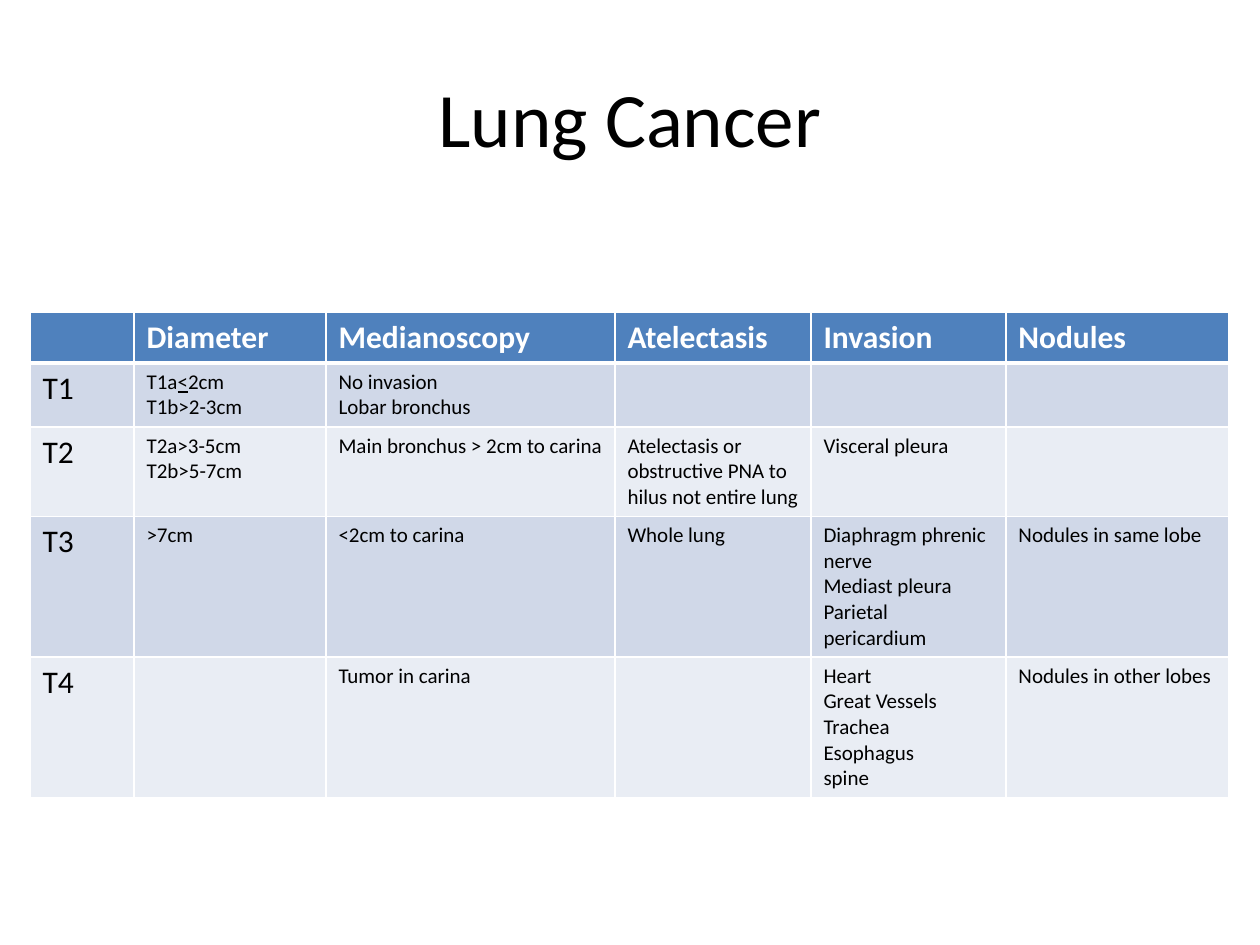
"""Build a one-page deck with the lung cancer T-stage table."""
from dataclasses import astuple, dataclass

from lxml.etree import SubElement
from pptx import Presentation
from pptx.dml.color import RGBColor
from pptx.enum.text import MSO_ANCHOR as Anchor, PP_ALIGN as Align
from pptx.oxml.ns import qn
from pptx.util import Emu, Pt

PX_PER_INCH = 126


@dataclass(frozen=True)
class Theme:
    font: str = "Calibri"
    ink: str = "000000"
    white: str = "FFFFFF"
    header: str = "4F81BD"
    bands: tuple[str, str] = ("D0D8E8", "E9EDF4")
    title_size: int = 44
    label_size: int = 18
    body_size: int = 12
    thin: int = 1
    thick: int = 3


@dataclass(frozen=True)
class Stage:
    """One table row; line breaks part paragraphs and underscores wrap underlined text."""
    name: str
    diameter: str = ""
    medianoscopy: str = ""
    atelectasis: str = ""
    invasion: str = ""
    nodules: str = ""


THEME = Theme()
TITLE_BOX = (63, 38, 1134, 158)
TABLE_LEFT, TABLE_TOP, TABLE_HEIGHT = 30, 312, 480
ROW_HEIGHT = 51
COLUMN_WIDTHS = (104, 192, 289, 196, 195, 223)
HEADER = Stage("", "Diameter", "Medianoscopy", "Atelectasis", "Invasion", "Nodules")
STAGES = (
    Stage("T1", "T1a_<_2cm\nT1b>2-3cm", "No invasion\nLobar bronchus"),
    Stage("T2", "T2a>3-5cm\nT2b>5-7cm", "Main bronchus > 2cm to carina",
          "Atelectasis or obstructive PNA to hilus not entire lung", "Visceral pleura"),
    Stage("T3", ">7cm", "<2cm to carina", "Whole lung",
          "Diaphragm phrenic nerve\nMediast pleura\nParietal pericardium",
          "Nodules in same lobe"),
    Stage("T4", "", "Tumor in carina", "",
          "Heart\nGreat Vessels\nTrachea\nEsophagus\nspine", "Nodules in other lobes"),
)


def px(length: int) -> Emu:
    """Turn pixels into EMU."""
    return Emu(round(length * 914400 / PX_PER_INCH))


def style_font(font, size: int, color: str, **extra) -> None:
    """Set a font's attributes."""
    values = {"name": THEME.font, "size": Pt(size), **extra}
    for name, value in values.items():
        setattr(font, name, value)
    font.color.rgb = RGBColor.from_string(color)


def write_cell(cell, text: str, size: int, color: str, bold: bool) -> None:
    """Write the paragraphs of a cell."""
    if not text:
        return
    frame = cell.text_frame
    for index, line in enumerate(text.split("\n")):
        para = frame.add_paragraph() if index else frame.paragraphs[0]
        for part, words in enumerate(line.split("_")):
            span = para.add_run()
            span.text = words
            style_font(span.font, size, color, bold=bold, underline=part % 2 == 1)


def paint_cell(cell, fill: str, top: int, bottom: int) -> None:
    """Give a cell white borders and a solid fill."""
    properties = cell._tc.get_or_add_tcPr()
    borders = {"lnL": THEME.thin, "lnR": THEME.thin, "lnT": top, "lnB": bottom}
    for side, width in borders.items():
        line = SubElement(properties, qn(f"a:{side}"), w=str(Pt(width)))
        solid = SubElement(line, qn("a:solidFill"))
        SubElement(solid, qn("a:srgbClr"), val=THEME.white)
    cell.fill.solid()
    cell.fill.fore_color.rgb = RGBColor.from_string(fill)


def add_title(page, text: str) -> None:
    """Fill and place the title placeholder."""
    title = page.shapes.title
    for name, value in zip(("left", "top", "width", "height"), TITLE_BOX):
        setattr(title, name, px(value))
    title.text_frame.text = text
    title.text_frame.vertical_anchor = Anchor.MIDDLE
    para = title.text_frame.paragraphs[0]
    para.alignment = Align.CENTER
    style_font(para.runs[0].font, THEME.title_size, THEME.ink)


def add_stage_table(page, header: Stage, stages: tuple[Stage, ...]) -> None:
    """Draw the header row and the banded stage rows."""
    rows = (header, *stages)
    holder = page.shapes.add_table(
        len(rows), len(COLUMN_WIDTHS), px(TABLE_LEFT), px(TABLE_TOP),
        px(sum(COLUMN_WIDTHS)), px(TABLE_HEIGHT))
    table = holder.table
    for column, width in zip(table.columns, COLUMN_WIDTHS):
        column.width = px(width)
    for index, stage in enumerate(rows):
        table.rows[index].height = px(ROW_HEIGHT)
        is_header = index == 0
        fill = THEME.header if is_header else THEME.bands[(index - 1) % 2]
        color = THEME.white if is_header else THEME.ink
        top = THEME.thick if index == 1 else THEME.thin
        bottom = THEME.thick if is_header else THEME.thin
        for position, text in enumerate(astuple(stage)):
            cell = table.cell(index, position)
            is_label = is_header or position == 0
            size = THEME.label_size if is_label else THEME.body_size
            paint_cell(cell, fill, top, bottom)
            write_cell(cell, text, size, color, is_header)
    holder.height = px(TABLE_HEIGHT)


def main() -> None:
    """Build and save the deck."""
    deck = Presentation()
    deck.slide_width, deck.slide_height = px(1260), px(945)
    page = deck.slides.add_slide(deck.slide_layouts[5])
    add_title(page, "Lung Cancer")
    add_stage_table(page, HEADER, STAGES)
    deck.save("out.pptx")


if __name__ == "__main__":
    main()
